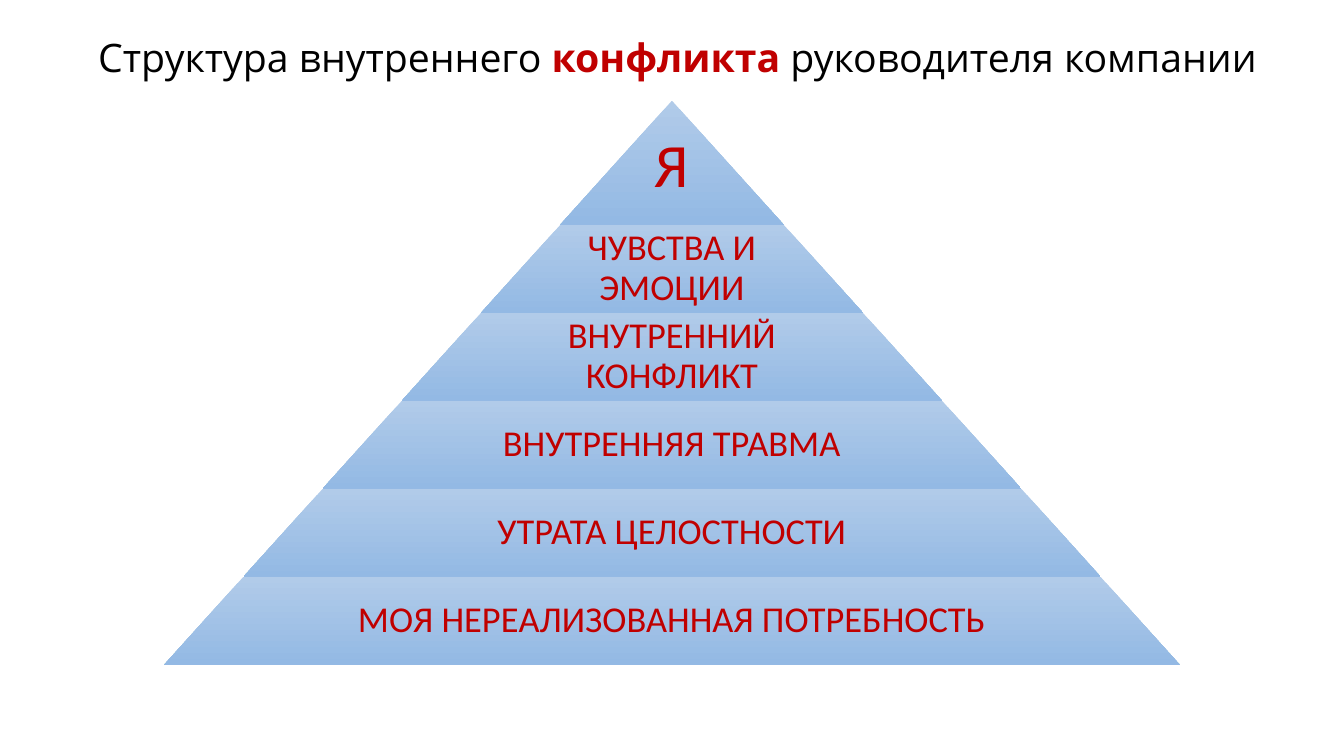
import pptx
import pptx.util
import pptx.dml.color
import pptx.enum.shapes
import pptx.enum.text
from dataclasses import dataclass


@dataclass(frozen=True)
class Theme:
    red: str = "C00000"
    black: str = "000000"
    light: str = "B1CBE9"
    deep: str = "93B9E4"
    head: str = "Open Sans"
    body: str = "Calibri"
    title: int = 28
    peak: int = 44
    label: int = 26


def color(code):
    return pptx.dml.color.RGBColor.from_string(code)


def write(para, text, font, size, tint, bold=False):
    run = para.add_run()
    run.text = text
    run.font.name = font
    run.font.size = pptx.util.Pt(size)
    run.font.color.rgb = color(tint)
    run.font.bold = bold


class Page:
    def __init__(self, deck, theme):
        self.theme = theme
        self.slide = deck.slides.add_slide(deck.slide_layouts[6])
        self.col = deck.slide_width / 100
        self.row = deck.slide_height / 100

    def place(self, left, top, width, height):
        return (round(left * self.col), round(top * self.row),
                round(width * self.col), round(height * self.row))

    def text(self, area, parts, size, font, pad, middle=True, space=0.9):
        frame = self.slide.shapes.add_textbox(*self.place(*area)).text_frame
        frame.word_wrap = True
        anchor = pptx.enum.text.MSO_ANCHOR
        frame.vertical_anchor = anchor.MIDDLE if middle else anchor.TOP
        across, down = pad
        frame.margin_left = frame.margin_right = pptx.util.Inches(across)
        frame.margin_top = frame.margin_bottom = pptx.util.Inches(down)
        para = frame.paragraphs[0]
        para.alignment = pptx.enum.text.PP_ALIGN.CENTER
        para.line_spacing = space
        for words, tint, bold in parts:
            write(para, words, font, size, tint, bold)

    def band(self, area, slope):
        kind = pptx.enum.shapes.MSO_SHAPE.TRAPEZOID
        shape = self.slide.shapes.add_shape(kind, *self.place(*area))
        shape.adjustments[0] = slope
        shape.shadow.inherit = False
        shape.line.fill.background()
        shape.fill.gradient()
        shape.fill.gradient_angle = 270
        tints = (self.theme.light, self.theme.deep)
        for stop, tint in zip(shape.fill.gradient_stops, tints):
            stop.color.rgb = color(tint)

    def pyramid(self, labels, top, peak, tier, slope):
        theme = self.theme
        depth = 0
        for rank, label in enumerate(labels):
            first = rank == 0
            height = peak if first else tier
            start = top + depth
            depth += height
            width = 2 * slope * depth * self.row / self.col
            self.band((50 - width / 2, start, width, height), slope)
            inner = width if first else 0.65 * width
            pad = 0.06 if first else 0.04
            self.text((50 - inner / 2, start, inner, height),
                      [(label, theme.red, False)],
                      theme.peak if first else theme.label, theme.body,
                      (pad, pad), space=1.0 if first else 0.9)


def main():
    deck = pptx.Presentation()
    deck.slide_width = pptx.util.Inches(13.33)
    deck.slide_height = pptx.util.Inches(7.5)
    theme = Theme()
    page = Page(deck, theme)
    page.text((4.8, 4.4, 91.2, 7.1), [
        ("Структура внутреннего ", theme.black, False),
        ("конфликта", theme.red, True),
        (" руководителя компании", theme.black, False),
    ], theme.title, theme.head, (0.1, 0.05), middle=False)
    page.pyramid([
        "Я",
        "ЧУВСТВА И ЭМОЦИИ",
        "ВНУТРЕННИЙ КОНФЛИКТ",
        "ВНУТРЕННЯЯ ТРАВМА",
        "УТРАТА ЦЕЛОСТНОСТИ",
        "МОЯ НЕРЕАЛИЗОВАННАЯ ПОТРЕБНОСТЬ",
    ], top=13.33, peak=16.4, tier=11.64, slope=0.9)
    deck.save("out.pptx")


if __name__ == "__main__":
    main()
